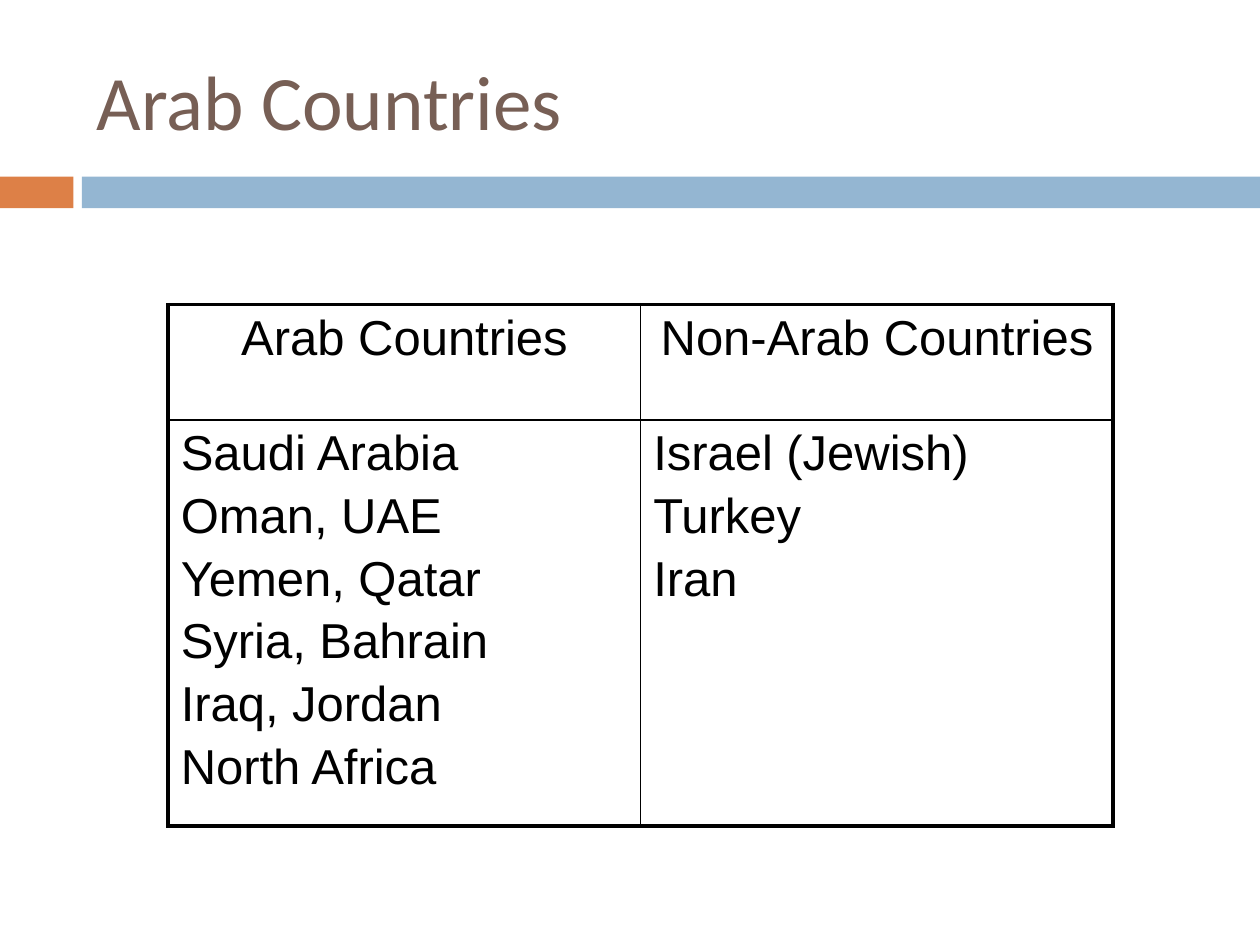
from lxml import etree
from pptx import Presentation
from pptx.dml.color import RGBColor
from pptx.enum.shapes import MSO_SHAPE
from pptx.enum.text import MSO_ANCHOR, PP_ALIGN
from pptx.oxml.ns import qn
from pptx.util import Cm, Pt

RECTANGLE = MSO_SHAPE.RECTANGLE
MIDDLE = MSO_ANCHOR.MIDDLE
LEFT, CENTER = PP_ALIGN.LEFT, PP_ALIGN.CENTER

TITLE_FORMAT = {"name": "Calibri", "size": Pt(44)}
CELL_FORMAT = {"name": "Arial", "size": Pt(28)}
BLACK = "000000"
OUTER_WIDTH, INNER_WIDTH = 2.25, 1
HEADER_HEIGHT = 2.33

COUNTRIES = [
    [["Arab Countries"], ["Non-Arab Countries"]],
    [
        ["Saudi Arabia", "Oman, UAE", "Yemen, Qatar",
         "Syria, Bahrain", "Iraq, Jordan", "North Africa"],
        ["Israel (Jewish)", "Turkey", "Iran"],
    ],
]


def color(value):
    """Return the colour for a hex string."""
    return RGBColor.from_string(value)


def write_paragraph(paragraph, text, font_format, text_color, alignment=LEFT):
    """Fill a paragraph with formatted text."""
    paragraph.alignment = alignment
    run = paragraph.add_run()
    run.text = text
    for name, value in font_format.items():
        setattr(run.font, name, value)
    run.font.color.rgb = color(text_color)


def add_title(slide, left, top, width, height):
    """Add the slide title in the given box."""
    shape = slide.shapes.add_textbox(Cm(left), Cm(top), Cm(width), Cm(height))
    shape.text_frame.word_wrap = True
    shape.text_frame.vertical_anchor = MIDDLE
    write_paragraph(shape.text_frame.paragraphs[0], "Arab Countries", TITLE_FORMAT, "775F55")


def add_band(slide, left, top, width, height):
    """Add the two-colour band: a short block, a gap and a long bar."""
    block_width, gap = 1.48, 0.17
    bar_start = block_width + gap
    parts = [(0, block_width, "DD8047"), (bar_start, width - bar_start, "94B6D2")]
    for offset, part_width, fill in parts:
        shape = slide.shapes.add_shape(
            RECTANGLE, Cm(left + offset), Cm(top), Cm(part_width), Cm(height))
        shape.shadow.inherit = False
        shape.fill.solid()
        shape.fill.fore_color.rgb = color(fill)
        shape.line.fill.background()


def set_borders(cell, widths):
    """Draw black cell borders from a dict of side to width in points."""
    properties = cell._tc.get_or_add_tcPr()
    for index, (side, width) in enumerate(widths.items()):
        line = etree.Element(qn(f"a:ln{side}"), w=str(Pt(width)))
        fill = etree.SubElement(line, qn("a:solidFill"))
        etree.SubElement(fill, qn("a:srgbClr"), val=BLACK)
        properties.insert(index, line)


def add_country_table(slide, left, top, width, height):
    """Add the country table with a thick frame and thin inner lines."""
    last_row, last_column = len(COUNTRIES) - 1, len(COUNTRIES[0]) - 1
    table = slide.shapes.add_table(
        last_row + 1, last_column + 1, Cm(left), Cm(top), Cm(width), Cm(height)).table
    table.rows[0].height = Cm(HEADER_HEIGHT)
    table.rows[1].height = Cm(height - HEADER_HEIGHT)
    for row, cells in enumerate(COUNTRIES):
        for column, lines in enumerate(cells):
            cell = table.cell(row, column)
            cell.fill.background()
            set_borders(cell, {
                "L": OUTER_WIDTH if column == 0 else INNER_WIDTH,
                "R": OUTER_WIDTH if column == last_column else INNER_WIDTH,
                "T": OUTER_WIDTH if row == 0 else INNER_WIDTH,
                "B": OUTER_WIDTH if row == last_row else INNER_WIDTH,
            })
            frame = cell.text_frame
            for index, text in enumerate(lines):
                paragraph = frame.add_paragraph() if index else frame.paragraphs[0]
                if index:
                    paragraph.space_before = Pt(4.6)
                write_paragraph(paragraph, text, CELL_FORMAT, BLACK,
                                CENTER if row == 0 else LEFT)


def main():
    """Build and save the slide."""
    presentation = Presentation()
    presentation.slide_width, presentation.slide_height = Cm(25.4), Cm(19.05)
    slide = presentation.slides.add_slide(presentation.slide_layouts[6])
    add_band(slide, 0, 3.56, 25.4, 0.64)
    add_title(slide, 1.7, 0.64, 22.65, 2.74)
    add_country_table(slide, 3.39, 6.14, 19.05, 10.18)
    presentation.save("out.pptx")


if __name__ == "__main__":
    main()
